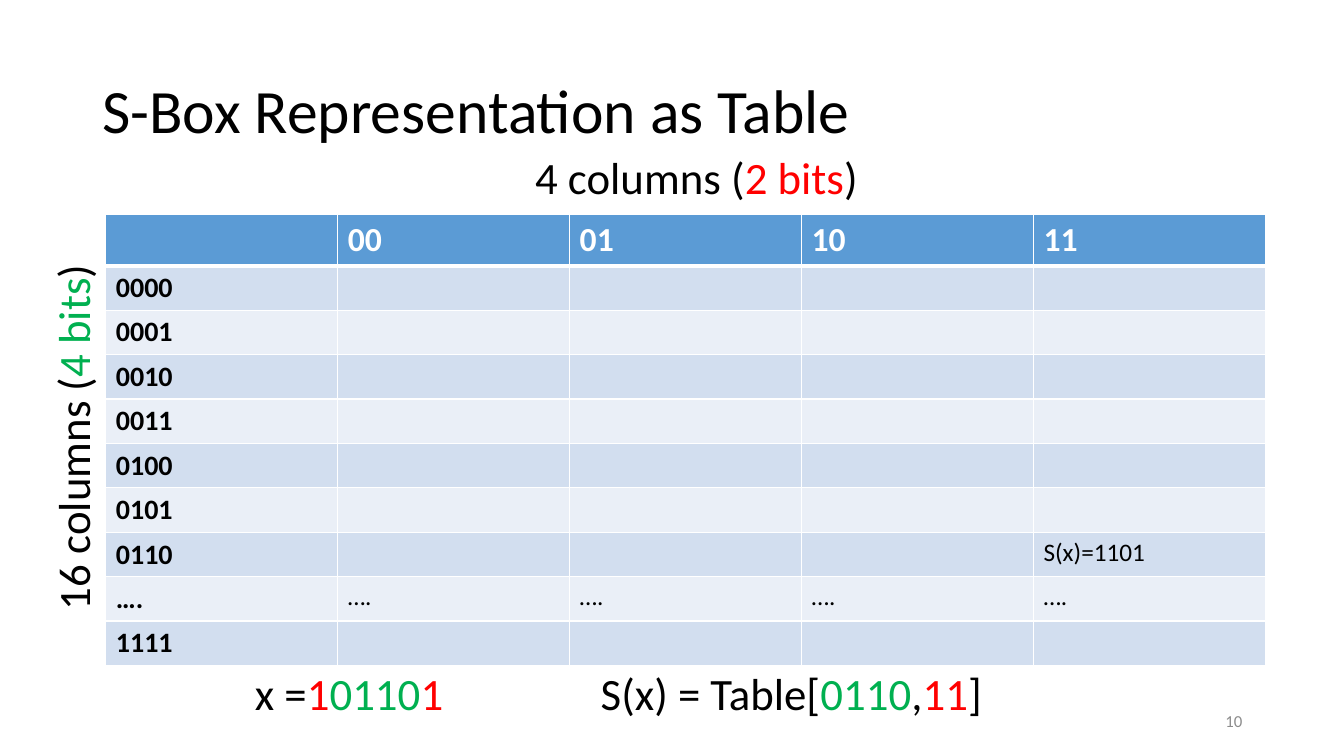
"""Build the slide that shows an S-box as a lookup table."""
from dataclasses import dataclass, field
from typing import Any

from lxml import etree
from pptx import Presentation
from pptx.dml.color import RGBColor
from pptx.enum.text import MSO_ANCHOR, MSO_AUTO_SIZE, PP_ALIGN
from pptx.oxml.ns import qn
from pptx.util import Inches, Pt

TOP, MIDDLE = MSO_ANCHOR.TOP, MSO_ANCHOR.MIDDLE
LEFT, RIGHT = PP_ALIGN.LEFT, PP_ALIGN.RIGHT
FIT_SHAPE, NO_FIT = MSO_AUTO_SIZE.SHAPE_TO_FIT_TEXT, MSO_AUTO_SIZE.NONE


@dataclass(frozen=True)
class Theme:
    font: str = "Calibri"
    text: str = "000000"
    column_bits: str = "FF0000"
    row_bits: str = "00B050"
    muted: str = "8C8C8C"
    white: str = "FFFFFF"
    header_fill: str = "5B9BD5"
    band_fills: tuple[str, str] = ("D2DEEF", "EAEFF7")
    title_size: int = 44
    label_size: int = 32
    header_size: int = 24
    row_size: int = 20
    cell_size: int = 18
    number_size: int = 12
    thin_border: int = 1
    thick_border: int = 3


THEME = Theme()


@dataclass(frozen=True)
class Run:
    text: str
    color: str = THEME.text


@dataclass(frozen=True)
class Label:
    box: tuple[float, float, float, float]
    runs: tuple[Run, ...]
    size: int = THEME.label_size
    rotation: int = 0
    frame: dict[str, Any] = field(
        default_factory=lambda: {"word_wrap": False, "auto_size": FIT_SHAPE, "vertical_anchor": TOP}
    )
    paragraph: dict[str, Any] = field(default_factory=lambda: {"alignment": LEFT})


FIXED_FRAME = {"word_wrap": True, "auto_size": NO_FIT, "vertical_anchor": MIDDLE}
LABELS = (
    Label((0.92, 0.4, 11.5, 1.45), (Run("S-Box Representation as Table"),), THEME.title_size,
          frame=FIXED_FRAME, paragraph={"alignment": LEFT, "line_spacing": 0.9}),
    Label((9.42, 6.95, 3, 0.4), (Run("10", THEME.muted),), THEME.number_size,
          frame=FIXED_FRAME, paragraph={"alignment": RIGHT}),
    Label((2.43, 6.56, 2.19, 0.64), (
        Run("x ="), Run("1", THEME.column_bits), Run("0110", THEME.row_bits), Run("1", THEME.column_bits))),
    Label((5.86, 6.56, 4.02, 0.64), (
        Run("S(x) = Table["), Run("0110", THEME.row_bits), Run(","), Run("11", THEME.column_bits), Run("]"))),
    Label((5.21, 1.44, 3.44, 0.64), (Run("4 columns ("), Run("2 bits", THEME.column_bits), Run(")"))),
    Label((-1.11, 4, 3.66, 0.64), (Run("16 columns ("), Run("4 bits", THEME.row_bits), Run(")")), rotation=270),
)

COLUMN_KEYS = ("00", "01", "10", "11")
BLANK_ROW = ("",) * len(COLUMN_KEYS)
TABLE_ROWS = (
    ("", *COLUMN_KEYS),
    *((f"{value:04b}", *BLANK_ROW) for value in range(6)),
    ("0110", "", "", "", "S(x)=1101"),
    ("….",) * 5,
    ("1111", *BLANK_ROW),
)
TABLE_LEFT, TABLE_TOP = 1.05, 2.13
COLUMN_WIDTH, ROW_HEIGHT = 2.3, 0.41


def set_values(target: Any, values: dict[str, Any]) -> None:
    """Set every named attribute on the target."""
    for name, value in values.items():
        setattr(target, name, value)


def add_run(paragraph: Any, content: Run, size: int, bold: bool = False) -> None:
    """Append one formatted run to the paragraph."""
    run = paragraph.add_run()
    run.text = content.text
    set_values(run.font, {"name": THEME.font, "size": Pt(size), "bold": bold})
    run.font.color.rgb = RGBColor.from_string(content.color)


def add_label(slide: Any, label: Label) -> None:
    """Draw one text box with its coloured runs."""
    shape = slide.shapes.add_textbox(*map(Inches, label.box))
    shape.rotation = label.rotation
    set_values(shape.text_frame, label.frame)
    paragraph = shape.text_frame.paragraphs[0]
    set_values(paragraph, label.paragraph)
    for run in label.runs:
        add_run(paragraph, run, label.size)


def add_borders(cell: Any, widths: dict[str, int]) -> None:
    """Give the cell white borders of the given point widths."""
    properties = cell._tc.get_or_add_tcPr()
    for side, width in widths.items():
        line = etree.SubElement(properties, qn(f"a:ln{side}"), w=str(Pt(width)))
        fill = etree.SubElement(line, qn("a:solidFill"))
        etree.SubElement(fill, qn("a:srgbClr"), val=THEME.white)


def format_cell(cell: Any, text: str, row: int, column: int) -> None:
    """Fill, outline and label one cell according to its place."""
    is_header = row == 0
    add_borders(cell, {
        "L": THEME.thin_border,
        "R": THEME.thin_border,
        "T": THEME.thick_border if row == 1 else THEME.thin_border,
        "B": THEME.thick_border if is_header else THEME.thin_border,
    })
    cell.fill.solid()
    fill = THEME.header_fill if is_header else THEME.band_fills[(row - 1) % 2]
    cell.fill.fore_color.rgb = RGBColor.from_string(fill)
    if text:
        body_size = THEME.row_size if column == 0 else THEME.cell_size
        size = THEME.header_size if is_header else body_size
        color = THEME.white if is_header else THEME.text
        add_run(cell.text_frame.paragraphs[0], Run(text, color), size, is_header or column == 0)


def add_lookup_table(slide: Any) -> None:
    """Draw the S-box table."""
    row_count, column_count = len(TABLE_ROWS), len(TABLE_ROWS[0])
    box = (TABLE_LEFT, TABLE_TOP, COLUMN_WIDTH * column_count, ROW_HEIGHT * row_count)
    table = slide.shapes.add_table(row_count, column_count, *map(Inches, box)).table
    for table_column in table.columns:
        table_column.width = Inches(COLUMN_WIDTH)
    for row, texts in enumerate(TABLE_ROWS):
        table.rows[row].height = Inches(ROW_HEIGHT)
        for column, text in enumerate(texts):
            format_cell(table.cell(row, column), text, row, column)


def main() -> None:
    """Create and save the presentation."""
    presentation = Presentation()
    set_values(presentation, {"slide_width": Inches(13.33), "slide_height": Inches(7.5)})
    slide = presentation.slides.add_slide(presentation.slide_layouts[6])
    add_lookup_table(slide)
    for label in LABELS:
        add_label(slide, label)
    presentation.save("out.pptx")


if __name__ == "__main__":
    main()
